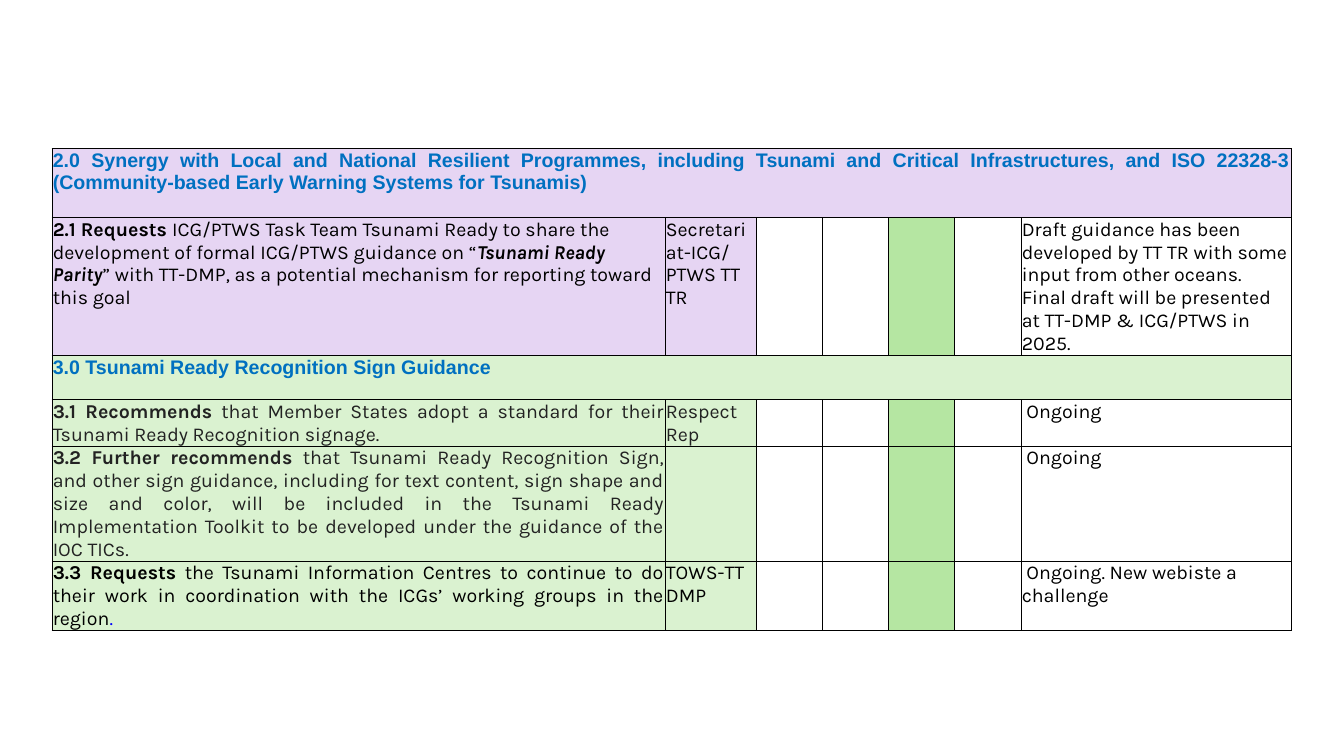
from lxml.etree import SubElement
from pptx import Presentation
from pptx.dml.color import RGBColor
from pptx.enum.text import PP_ALIGN
from pptx.oxml.ns import qn
from pptx.util import Cm, Pt

BLACK, GREY, BLUE, LINK = "000000", "222222", "0070C0", "0000FF"
LILAC, MINT, GREEN = "E6D5F3", "DAF2D0", "B5E6A2"
LEFT, JUSTIFY = PP_ALIGN.LEFT, PP_ALIGN.JUSTIFY
STATUS_COLUMN = 4


def rgb(value):
    return RGBColor.from_string(value)


def write(cell, runs, align, font="Karla"):
    """Fill a cell with (text, colour, style) runs; style holds b and i."""
    paragraph = cell.text_frame.paragraphs[0]
    paragraph.alignment = align
    for text, color, style in runs:
        run = paragraph.add_run()
        run.text = text
        run.font.name = font
        run.font.size = Pt(14)
        run.font.bold = "b" in style
        run.font.italic = "i" in style
        run.font.color.rgb = rgb(color)


# Section headings: row, fill, alignment, text
sections = [
    (0, LILAC, JUSTIFY,
     "2.0 Synergy with Local and National Resilient Programmes, including "
     "Tsunami and Critical Infrastructures, and ISO 22328-3 "
     "(Community-based Early Warning Systems for Tsunamis)"),
    (2, MINT, LEFT, "3.0 Tsunami Ready Recognition Sign Guidance"),
]

# Recommendations: row, fill, alignment, action runs, owner, owner colour, progress
recommendations = [
    (1, LILAC, LEFT,
     [("2.1 Requests ", BLACK, "b"),
      ("ICG/PTWS Task Team Tsunami Ready to share the development of formal "
       "ICG/PTWS guidance on “", BLACK, ""),
      ("Tsunami Ready Parity", BLACK, "bi"),
      ("” with TT-DMP, as a potential mechanism for reporting toward this goal",
       BLACK, "")],
     "Secretariat-ICG/PTWS TT TR", BLACK,
     "Draft guidance has been developed by TT TR with some input from other "
     "oceans. Final draft will be presented at TT-DMP & ICG/PTWS in 2025."),
    (3, MINT, JUSTIFY,
     [("3.1 Recommends", GREY, "b"),
      (" that Member States adopt a standard for their Tsunami Ready "
       "Recognition signage.", GREY, "")],
     "Respect Rep", GREY, " Ongoing"),
    (4, MINT, JUSTIFY,
     [("3.2 Further recommends", GREY, "b"),
      (" that Tsunami Ready Recognition Sign, and other sign guidance, "
       "including for text content, sign shape and size and color, will be "
       "included in the Tsunami Ready Implementation Toolkit to be developed "
       "under the guidance of the IOC TICs.", GREY, "")],
     "", GREY, " Ongoing"),
    (5, MINT, JUSTIFY,
     [("3.3 Requests", BLACK, "b"),
      (" the Tsunami Information Centres to continue to do their work in "
       "coordination with the ICGs’ working groups in the region", BLACK, ""),
      (".", LINK, "")],
     "TOWS-TT DMP", BLACK, " Ongoing. New webiste a challenge"),
]

presentation = Presentation()
presentation.slide_width = Cm(33.87)
presentation.slide_height = Cm(19.05)
slide = presentation.slides.add_slide(presentation.slide_layouts[6])

# Table grid
widths = [15.45, 2.29, 1.67, 1.67, 1.67, 1.67, 6.82]
heights = [1.74, 2.9, 1.11, 1.17, 2.9, 1.74]
tracker = slide.shapes.add_table(
    len(heights), len(widths), Cm(1.31), Cm(3.74),
    Cm(sum(widths)), Cm(sum(heights))).table
tracker.first_row = False
tracker.horz_banding = False
for column, width in zip(tracker.columns, widths):
    column.width = Cm(width)
for row, height in zip(tracker.rows, heights):
    row.height = Cm(height)

# Margins, thin black borders and no fill for every cell
for cell in tracker.iter_cells():
    cell.margin_left = cell.margin_right = cell.margin_top = Cm(0.02)
    cell.margin_bottom = 0
    properties = cell._tc.get_or_add_tcPr()
    for side in ("a:lnL", "a:lnR", "a:lnT", "a:lnB"):
        border = SubElement(properties, qn(side), w=str(Pt(0.5)))
        SubElement(SubElement(border, qn("a:solidFill")),
                   qn("a:srgbClr"), val=BLACK)
    cell.fill.background()

# Section headings across the full width
for row, fill, align, heading in sections:
    banner = tracker.cell(row, 0)
    banner.merge(tracker.cell(row, len(widths) - 1))
    banner.fill.solid()
    banner.fill.fore_color.rgb = rgb(fill)
    write(banner, [(heading, BLUE, "b")], align, "Arial")

# Recommendations with owner, status and progress
for row, fill, align, action, owner, owner_color, progress in recommendations:
    for column, color in ((0, fill), (1, fill), (STATUS_COLUMN, GREEN)):
        cell = tracker.cell(row, column)
        cell.fill.solid()
        cell.fill.fore_color.rgb = rgb(color)
    write(tracker.cell(row, 0), action, align)
    if owner:
        write(tracker.cell(row, 1), [(owner, owner_color, "")], align)
    write(tracker.cell(row, len(widths) - 1), [(progress, BLACK, "")], LEFT)

presentation.save("out.pptx")
